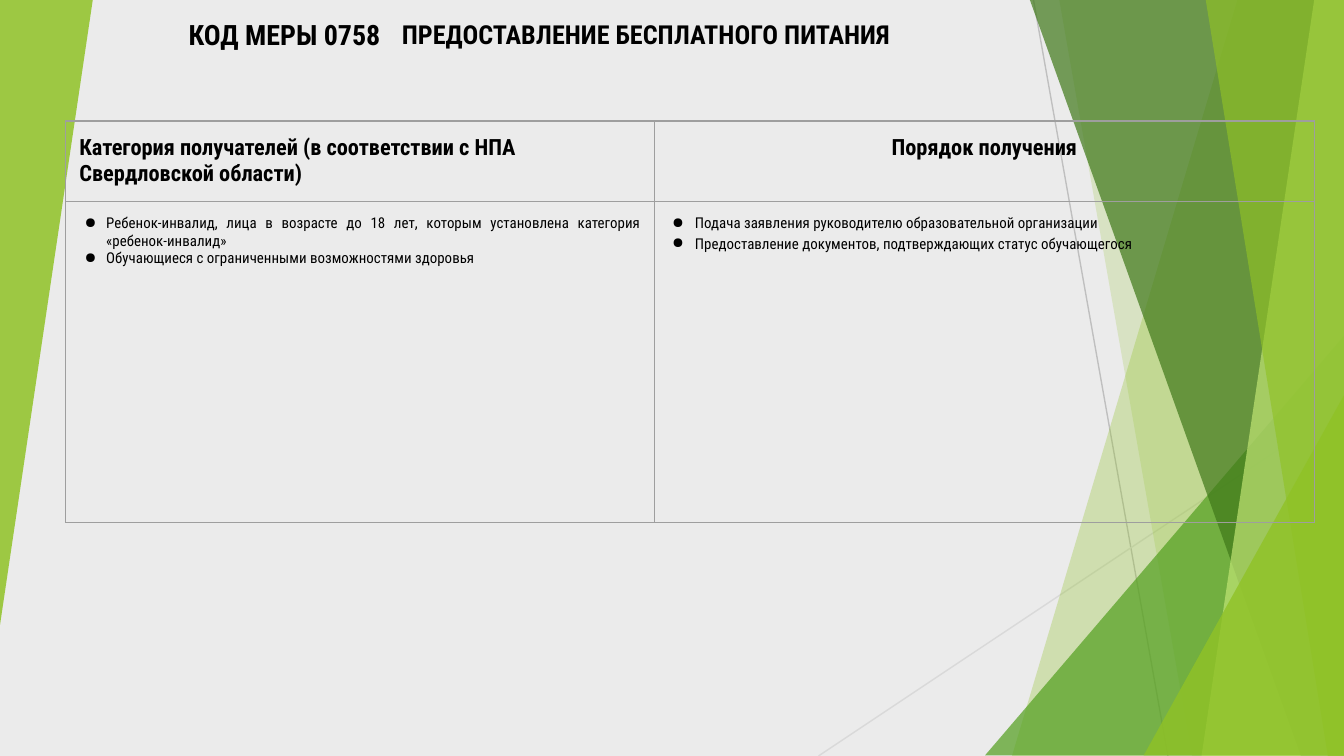
from lxml import etree
from pptx import Presentation
from pptx.dml.color import RGBColor
from pptx.enum import shapes, text
from pptx.oxml.ns import qn
from pptx.util import Inches, Pt

FONT = "Roboto Condensed"
LEFT, MID, RIGHT, FULL = (text.PP_ALIGN.LEFT, text.PP_ALIGN.CENTER,
                          text.PP_ALIGN.RIGHT, text.PP_ALIGN.JUSTIFY)
LIME = "90C226"
WIDE = Inches(10)
HIGH = WIDE * 9 // 16


def rgb(code):
    return RGBColor.from_string(code)


def sub(node, tag, **attrs):
    return etree.SubElement(node, qn(tag), **attrs)


def paint(shape, color, alpha):
    """Flat see-through fill with no line or shadow."""
    shape.shadow.inherit = False
    shape.line.fill.background()
    shape.fill.solid()
    shape.fill.fore_color.rgb = rgb(color)
    clr = shape._element.spPr.find(".//" + qn("a:srgbClr"))
    sub(clr, "a:alpha", val=str(alpha * 1000))


def add_ray(slide, x1, y1, x2, color):
    """Thin line down to the bottom of the slide."""
    ray = slide.shapes.add_connector(
        shapes.MSO_CONNECTOR.STRAIGHT,
        Inches(x1), Inches(y1), Inches(x2), HIGH)
    ray.line.color.rgb = rgb(color)
    ray.line.width = Pt(0.75)
    sub(ray._element.spPr, "a:effectLst")


def add_blade(slide, top, low, color, alpha):
    """Band from a slanted left edge to the right side of the slide."""
    peak = Inches(-0.01)
    pts = [(Inches(top), peak), (WIDE, peak),
           (WIDE, HIGH), (Inches(low), HIGH)]
    form = slide.shapes.build_freeform(*pts[0])
    form.add_line_segments(pts[1:], close=True)
    paint(form.convert_to_shape(), color, alpha)


def add_wedge(slide, box, color, alpha, turn=0):
    wedge = slide.shapes.add_shape(
        shapes.MSO_SHAPE.ISOSCELES_TRIANGLE, *map(Inches, box))
    wedge.adjustments[0] = 1
    wedge.rotation = turn
    paint(wedge, color, alpha)


def add_run(para, words, size, bold=True, align=LEFT):
    para.alignment = align
    run = para.add_run()
    run.text = words
    run.font.name = FONT
    run.font.size = Pt(size)
    run.font.bold = bold
    run.font.color.rgb = rgb("000000")


def add_label(slide, box, words, size, align, pad):
    label = slide.shapes.add_textbox(*map(Inches, box))
    frame = label.text_frame
    frame.word_wrap = True
    frame.vertical_anchor = text.MSO_ANCHOR.MIDDLE
    frame.margin_left = frame.margin_right = Inches(pad[0])
    frame.margin_top = frame.margin_bottom = Inches(pad[1])
    add_run(frame.paragraphs[0], words, size, align=align)


def add_bullet(para, hang):
    props = para._p.get_or_add_pPr()
    props.set("marL", str(Inches(0.2)))
    props.set("indent", str(-Inches(hang)))
    sub(sub(props, "a:buClr"), "a:srgbClr", val="000000")
    sub(props, "a:buChar", char="●")


def style_cell(cell):
    cell.margin_left = cell.margin_right = Inches(0.1)
    cell.margin_top = cell.margin_bottom = Inches(0.1)
    props = cell._tc.get_or_add_tcPr()
    for side in "LRTB":
        edge = sub(props, "a:ln" + side, w=str(Pt(0.75)))
        sub(sub(edge, "a:solidFill"), "a:srgbClr", val="9E9E9E")
    cell.fill.background()


def add_grid(slide, heads, lists):
    box = map(Inches, (0.49, 0.9, 9.29, 2.99))
    holder = slide.shapes.add_table(2, 2, *box)
    grid = holder.table
    grid.first_row = grid.horz_banding = False
    for col, wide in zip(grid.columns, (4.38, 4.91)):
        col.width = Inches(wide)
    for row, high in zip(grid.rows, (0.39, 2.39)):
        row.height = Inches(high)
    holder.height = Inches(2.99)
    for cell in grid.iter_cells():
        style_cell(cell)

    # Header row
    for col, (words, align) in enumerate(heads):
        para = grid.cell(0, col).text_frame.paragraphs[0]
        add_run(para, words, 12, align=align)

    # Bulleted lists
    for col, (align, hang, items) in enumerate(lists):
        frame = grid.cell(1, col).text_frame
        for num, (words, space) in enumerate(items):
            para = frame.add_paragraph() if num else frame.paragraphs[0]
            add_run(para, words, 8, False, align)
            para.line_spacing = space
            add_bullet(para, hang)


def main():
    prs = Presentation()
    prs.slide_width, prs.slide_height = WIDE, HIGH
    slide = prs.slides.add_slide(prs.slide_layouts[6])
    back = slide.background.fill
    back.solid()
    back.fore_color.rgb = rgb("EBEBEB")

    # Green facets
    add_ray(slide, 7.69, 0, 8.69, "BFBFBF")
    add_ray(slide, 10, 3.02, 6.09, "D9D9D9")
    add_blade(slide, 9.21, 7.53, LIME, 30)
    add_blade(slide, 7.88, 8.87, LIME, 20)
    add_wedge(slide, (7.33, 2.5, 2.67, 3.12), "54A021", 72)
    add_blade(slide, 7.66, 9.68, "3F7819", 70)
    add_blade(slide, 9.78, 8.94, "C0E474", 70)
    add_blade(slide, 8.97, 9.88, LIME, 65)
    add_wedge(slide, (8.51, 2.94, 1.49, 2.68), LIME, 80)
    add_wedge(slide, (0, 0, 0.69, 4.65), LIME, 85, 180)

    # Code, table and title
    add_label(slide, (0.82, 0.01, 2.11, 0.49), "КОД МЕРЫ 0758",
              15, RIGHT, (0.1, 0.1))
    add_grid(
        slide,
        [("Категория получателей (в соответствии с НПА Свердловской области)",
          LEFT), ("Порядок получения", MID)],
        [(FULL, 0.16, [
            ("Ребенок-инвалид, лица в возрасте до 18 лет, которым "
             "установлена категория «ребенок-инвалид»", 1.0),
            ("Обучающиеся с ограниченными возможностями здоровья", 1.0)]),
         (LEFT, 0.17, [
             ("Подача заявления руководителю образовательной организации",
              1.0),
             ("Предоставление документов, подтверждающих статус "
              "обучающегося", 1.15)])])
    add_label(slide, (2.92, 0.01, 6.3, 0.49),
              "ПРЕДОСТАВЛЕНИЕ БЕСПЛАТНОГО ПИТАНИЯ", 14, LEFT, (0.07, 0.04))

    prs.save("out.pptx")


if __name__ == "__main__":
    main()
